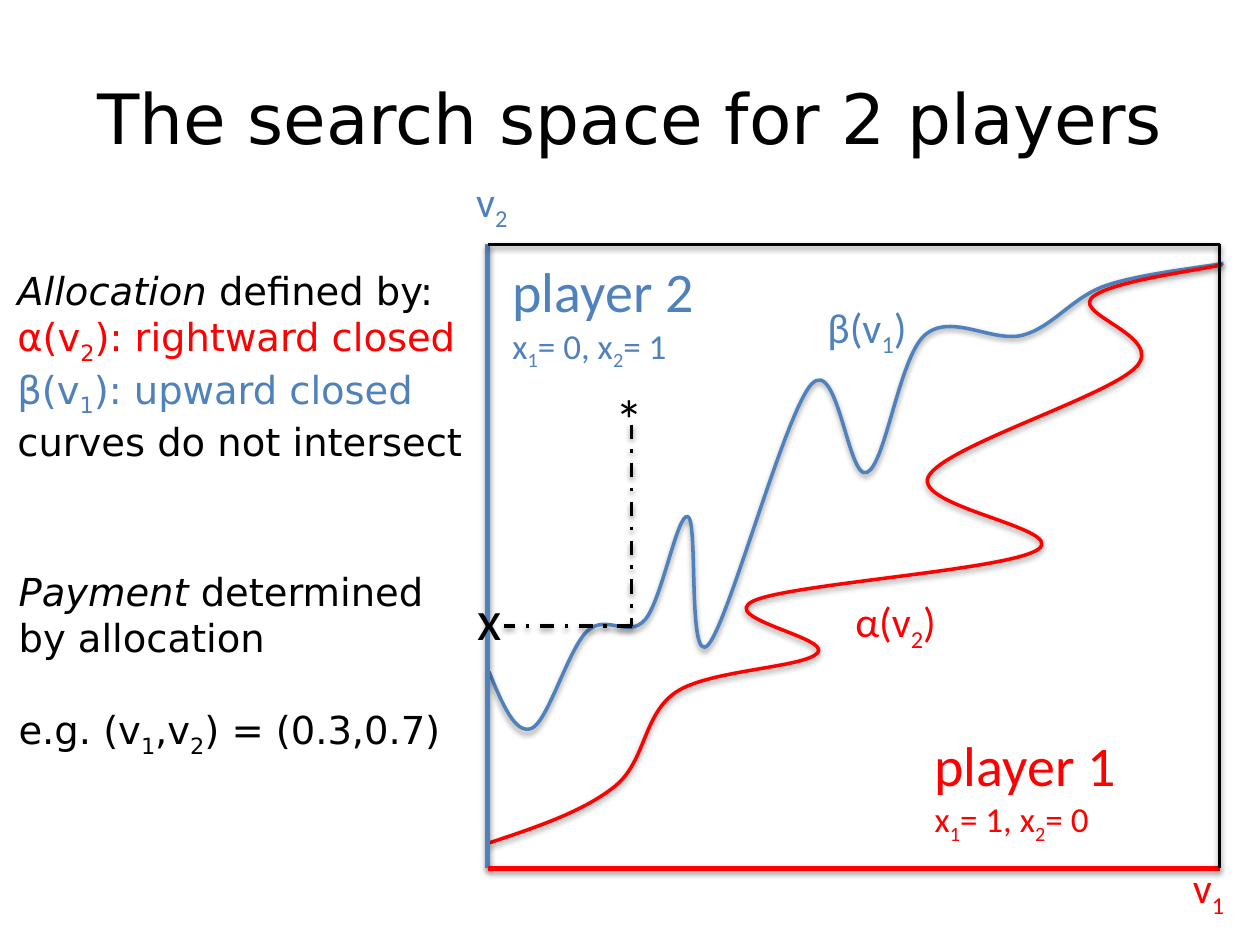
from lxml.etree import SubElement as Sub
from pptx import Presentation
from pptx.dml.color import RGBColor as Rgb
from pptx.enum.dml import MSO_LINE as Dash
from pptx.enum.shapes import MSO_CONNECTOR as Conn
from pptx.enum.text import MSO_ANCHOR as Anchor, PP_ALIGN as Align
from pptx.oxml.ns import qn
from pptx.util import Pt

BLACK, RED, BLUE = "000000", "FF0000", "4F81BD"
SANS, CALI = "DejaVu Sans", "Calibri"
LEFT, TOP, RIGHT, BASE = 278.6, 139.7, 697, 496.1
BID = (360.9, 357.8)
BETA = [(279.4, 383.8), (303.8, 416.2), (335.5, 360.7), (368.6, 354.2),
        (393.1, 295.2), (404.6, 368.6), (463.7, 219.6), (495.4, 270),
        (528.5, 191.5), (584.6, 191.5), (631.4, 163.4), (699.1, 150.5)]
ALPHA = [(279.4, 481.7), (351.4, 449.3), (386.6, 395.3), (467.3, 373),
         (430.6, 343.4), (593.3, 313.9), (530.6, 272.2), (649.4, 209.5),
         (623.5, 170.6), (698.4, 151.2)]


def paint(hue):
    return Rgb.from_string(hue)


def add_run(para, text, font, size, hue, slant=False, low=False):
    run = para.add_run()
    run.text = text
    run.font.name = font
    run.font.size = Pt(size)
    run.font.color.rgb = paint(hue)
    if slant:
        run.font.italic = True
    if low:
        run.font._element.set("baseline", "-25000")


def add_math(para, text, font, size, hue, slant=False):
    head, *tails = text.split("_")
    add_run(para, head, font, size, hue, slant)
    for tail in tails:
        add_run(para, tail[0], font, size, hue, slant, True)
        if tail[1:]:
            add_run(para, tail[1:], font, size, hue, slant)


def add_text(slide, at, font, paras):
    box = slide.shapes.add_textbox(*map(Pt, at))
    frame = box.text_frame
    frame.word_wrap = True
    for i, parts in enumerate(paras):
        para = frame.add_paragraph() if i else frame.paragraphs[0]
        for part in parts:
            if part == "\n":
                para.add_line_break()
            else:
                add_math(para, part[0], font, *part[1:])
    return frame


def add_label(slide, at, text, hue, size=24):
    add_text(slide, at, CALI, [[(text, size, hue)]])


def add_player(slide, x, y, name, rule, hue):
    add_text(slide, (x, y, 152, 70.6), CALI,
             [[(name, 32, hue), "\n", (rule, 20, hue)]])


def add_shadow(shape):
    glow = Sub(shape._element.spPr, qn("a:effectLst"))
    drop = Sub(glow, qn("a:outerShdw"), blurRad=str(Pt(3.1)),
               dist=str(Pt(1.6)), dir="5400000", rotWithShape="0")
    tint = Sub(drop, qn("a:srgbClr"), val=BLACK)
    Sub(tint, qn("a:alpha"), val="38000")


def style_line(shape, hue, width, dash=None):
    shape.line.color.rgb = paint(hue)
    shape.line.width = Pt(width)
    if dash:
        shape.line.dash_style = dash
    add_shadow(shape)


def add_line(slide, start, end, hue, width=2, dash=None):
    line = slide.shapes.add_connector(Conn.STRAIGHT, *map(Pt, start + end))
    style_line(line, hue, width, dash)


def mid(a, b):
    return (a[0] + b[0]) / 2, (a[1] + b[1]) / 2


def spline(knots):
    ends = [knots[0], *knots, knots[-1]]
    slopes = [((c[0] - a[0]) / 6, (c[1] - a[1]) / 6)
              for a, c in zip(ends, ends[2:])]
    dots = []
    for i, (a, b) in enumerate(zip(knots, knots[1:])):
        near = (b[0] - slopes[i + 1][0], b[1] - slopes[i + 1][1])
        far = (a[0] + slopes[i][0], a[1] + slopes[i][1])
        dots += [far if i else mid(a, near), near, b]
    return dots


def add_curve(slide, knots, hue):
    pen = slide.shapes.build_freeform(*map(Pt, knots[0]))
    pen.add_line_segments([(Pt(x), Pt(y)) for x, y in spline(knots)], close=False)
    curve = pen.convert_to_shape()
    steps = list(curve._element.iter(qn("a:lnTo")))
    for i in range(0, len(steps), 3):
        bend = Sub(steps[i].getparent(), qn("a:cubicBezTo"))
        for step in steps[i:i + 3]:
            bend.append(step[0])
            step.getparent().remove(step)
    curve.fill.background()
    style_line(curve, hue, 2)


def add_notes(slide):
    title = add_text(slide, (36, 21.6, 648, 90), SANS,
                     [[("The search space for 2 players", 39.6, BLACK)]])
    title.vertical_anchor = Anchor.MIDDLE
    title.paragraphs[0].alignment = Align.CENTER
    add_text(slide, (2.9, 149, 278.6, 140.4), SANS, [
        [("Allocation ", 22, BLACK, True), ("defined by:", 22, BLACK)],
        [("α(v_2): rightward closed", 22, RED), "\n",
         ("β(v_1): upward closed", 22, BLUE)],
        [("curves do not intersect", 22, BLACK)]])
    pay = add_text(slide, (3.6, 321.1, 277.9, 167), SANS, [
        [("Payment ", 22, BLACK, True), ("determined ", 22, BLACK), "\n",
         ("by allocation", 22, BLACK)],
        [("e.g. (v_1,v_2) = (0.3,0.7)", 22, BLACK)]])
    pay.paragraphs[1].space_before = Pt(26)


def add_plot(slide):
    add_curve(slide, BETA, BLUE)
    add_curve(slide, ALPHA, RED)
    add_player(slide, 527, 414, "player 1", "x_1= 1, x_2= 0", RED)
    add_player(slide, 285.8, 143.3, "player 2", "x_1= 0, x_2= 1", BLUE)
    add_label(slide, (481.7, 337, 67.7, 36), "α(v_2)", RED)
    add_label(slide, (465.8, 168.5, 67.7, 36), "β(v_1)", BLUE)
    add_label(slide, (674.6, 488.9, 50.4, 36), "v_1", RED)
    add_label(slide, (265, 96.5, 46.8, 36), "v_2", BLUE)
    add_line(slide, (LEFT, TOP), (LEFT, BASE), BLUE, 3)
    add_line(slide, (LEFT, BASE), (RIGHT, BASE), RED, 3)
    add_line(slide, (LEFT, TOP), (RIGHT, TOP), BLACK)
    add_line(slide, (RIGHT, TOP), (RIGHT, BASE), BLACK)


def add_bid(slide):
    add_label(slide, (344.9, 216, 35.3, 46), "*", BLACK, 32)
    add_line(slide, (BID[0], 242.6), BID, BLACK, dash=Dash.DASH_DOT)
    add_line(slide, BID, (288, BID[1]), BLACK, dash=Dash.DASH_DOT)
    add_label(slide, (265.7, 330.5, 35.3, 46), "x", BLACK, 32)


def main():
    deck = Presentation()
    deck.slide_width, deck.slide_height = Pt(720), Pt(540)
    slide = deck.slides.add_slide(deck.slide_layouts[6])
    add_notes(slide)
    add_plot(slide)
    add_bid(slide)
    deck.save("out.pptx")


if __name__ == "__main__":
    main()
